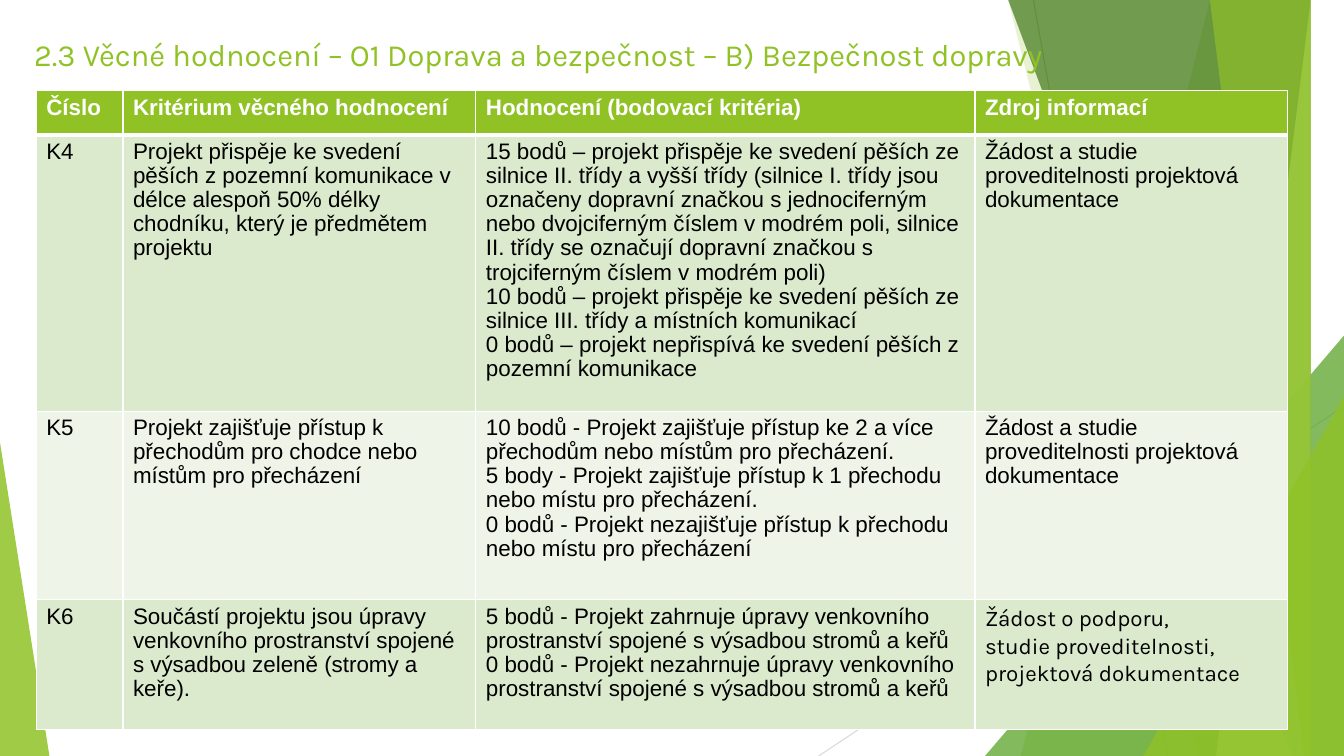
from dataclasses import dataclass

from lxml import etree
from pptx import Presentation
from pptx.dml.color import RGBColor
from pptx.enum.shapes import MSO_CONNECTOR, MSO_SHAPE
from pptx.oxml.ns import qn
from pptx.util import Inches, Pt

STRAIGHT = MSO_CONNECTOR.STRAIGHT
TRIANGLE = MSO_SHAPE.ISOSCELES_TRIANGLE


@dataclass(frozen=True)
class Theme:
    green: str = "90C226"
    mid_green: str = "54A021"
    dark_green: str = "3F7819"
    lime: str = "C0E474"
    band_dark: str = "DBE9CD"
    band_light: str = "EEF4E8"
    white: str = "FFFFFF"
    black: str = "000000"
    line_dark: str = "BFBFBF"
    line_light: str = "D9D9D9"
    title_font: str = "Karla"
    body_font: str = "Arial"
    title_size: int = 22
    body_size: int = 16


theme = Theme()


def paint(shape, color, opacity):
    """Fill a decorative shape with a translucent colour, without outline or shadow."""
    shape.shadow.inherit = False
    shape.line.fill.background()
    shape.fill.solid()
    shape.fill.fore_color.rgb = RGBColor.from_string(color)
    color_xml = shape.fill._xPr.find(qn("a:solidFill"))[0]
    etree.SubElement(color_xml, qn("a:alpha"), val=str(opacity * 1000))


def add_border(cell, side, width):
    """Give one side of a table cell a white border."""
    border = etree.SubElement(cell._tc.get_or_add_tcPr(), qn(f"a:{side}"), w=str(Pt(width)))
    fill = etree.SubElement(border, qn("a:solidFill"))
    etree.SubElement(fill, qn("a:srgbClr"), val=theme.white)


prs = Presentation()
prs.slide_width = Inches(13.33)
prs.slide_height = Inches(7.5)
slide = prs.slides.add_slide(prs.slide_layouts[6])
shapes = slide.shapes

# Background lines: start, end, colour
for x1, y1, x2, y2, color in [
    (10.25, 0, 11.58, 7.5, theme.line_dark),
    (13.33, 4.03, 8.12, 7.5, theme.line_light),
]:
    ray = shapes.add_connector(STRAIGHT, Inches(x1), Inches(y1), Inches(x2), Inches(y2))
    ray.line.color.rgb = RGBColor.from_string(color)
    ray.line.width = Pt(0.75)
    etree.SubElement(ray._element.spPr, qn("a:effectLst"))

# Facets from back to front. A band has its left edge at the top and at the bottom
# and reaches the right side of the slide; a triangle has left, top, width, height, apex.
facets = [
    ((12.28, 10.04), theme.green, 30),
    ((10.5, 11.83), theme.green, 20),
    ((9.77, 3.33, 3.56, 4.17, 1), theme.mid_green, 72),
    ((10.21, 12.91), theme.dark_green, 70),
    ((13.03, 11.92), theme.lime, 70),
    ((11.96, 13.18), theme.green, 65),
    ((11.34, 3.93, 1.99, 3.57, 1), theme.green, 80),
    ((0, 4.39, 0.49, 3.11, 0), theme.green, 85),
]
for geometry, color, opacity in facets:
    if len(geometry) == 2:
        top_x, bottom_x = geometry
        outline = shapes.build_freeform(top_x, -0.01, scale=Inches(1))
        outline.add_line_segments([(13.33, -0.01), (13.33, 7.5), (bottom_x, 7.5)], close=True)
        facet = outline.convert_to_shape()
    else:
        *box, apex = geometry
        facet = shapes.add_shape(TRIANGLE, *[Inches(v) for v in box])
        facet.adjustments[0] = apex
    paint(facet, color, opacity)

title = shapes.add_textbox(Inches(0.24), Inches(0.31), Inches(10.25), Inches(0.59))
title.text_frame.word_wrap = True
heading = title.text_frame.paragraphs[0]
heading.text = "2.3 Věcné hodnocení – O1 Doprava a bezpečnost – B) Bezpečnost dopravy"
heading.font.name = theme.title_font
heading.font.size = Pt(theme.title_size)
heading.font.color.rgb = RGBColor.from_string(theme.green)

# Each cell is a list of paragraphs joined by line feeds
shared_source = "Žádost a studie proveditelnosti projektová dokumentace"
criteria = [
    ["Číslo", "Kritérium věcného hodnocení", "Hodnocení (bodovací kritéria)", "Zdroj informací"],
    [
        "K4",
        "Projekt přispěje ke svedení pěších z pozemní komunikace v délce alespoň 50% délky "
        "chodníku, který je předmětem projektu",
        "15 bodů – projekt přispěje ke svedení pěších ze silnice II. třídy a vyšší třídy "
        "(silnice I. třídy jsou označeny dopravní značkou s jednociferným nebo dvojciferným "
        "číslem v modrém poli, silnice II. třídy se označují dopravní značkou s trojciferným "
        "číslem v modrém poli)\n"
        "10 bodů – projekt přispěje ke svedení pěších ze silnice III. třídy a místních "
        "komunikací\n"
        "0 bodů – projekt nepřispívá ke svedení pěších z pozemní komunikace",
        shared_source,
    ],
    [
        "K5",
        "Projekt zajišťuje přístup k přechodům pro chodce nebo místům pro přecházení",
        "10 bodů - Projekt zajišťuje přístup ke 2 a více přechodům nebo místům pro "
        "přecházení.\n"
        "5 body - Projekt zajišťuje přístup k 1 přechodu nebo místu pro přecházení.\n"
        "0 bodů - Projekt nezajišťuje přístup k přechodu nebo místu pro přecházení",
        shared_source,
    ],
    [
        "K6",
        "Součástí projektu jsou úpravy venkovního prostranství spojené s výsadbou zeleně "
        "(stromy a keře).",
        "5 bodů - Projekt zahrnuje úpravy venkovního prostranství spojené s výsadbou stromů "
        "a keřů\n"
        "0 bodů - Projekt nezahrnuje úpravy venkovního prostranství spojené s výsadbou "
        "stromů a keřů",
        "Žádost o podporu,\nstudie proveditelnosti,\nprojektová dokumentace",
    ],
]
column_widths = [0.86, 3.5, 4.95, 3.1]
row_heights = [0.44, 2.74, 1.87, 1.29]
row_fills = [theme.green, theme.band_dark, theme.band_light, theme.band_dark]

table = shapes.add_table(
    len(row_heights), len(column_widths),
    Inches(0.36), Inches(0.9), Inches(sum(column_widths)), Inches(sum(row_heights)),
).table
for column, width in zip(table.columns, column_widths):
    column.width = Inches(width)

for r, texts in enumerate(criteria):
    table.rows[r].height = Inches(row_heights[r])
    is_header = r == 0
    for c, text in enumerate(texts):
        cell = table.cell(r, c)
        for side in ("lnL", "lnR", "lnT", "lnB"):
            under_header = (r, side) in [(0, "lnB"), (1, "lnT")]
            add_border(cell, side, 3 if under_header else 1)
        cell.fill.solid()
        cell.fill.fore_color.rgb = RGBColor.from_string(row_fills[r])
        cell.text = text
        in_title_font = (r, c) == (3, 3)
        for paragraph in cell.text_frame.paragraphs:
            paragraph.line_spacing = 1.05 if in_title_font else 0.97
            paragraph.font.name = theme.title_font if in_title_font else theme.body_font
            paragraph.font.size = Pt(theme.body_size)
            paragraph.font.bold = is_header
            paragraph.font.color.rgb = RGBColor.from_string(
                theme.white if is_header else theme.black
            )

prs.save("out.pptx")
